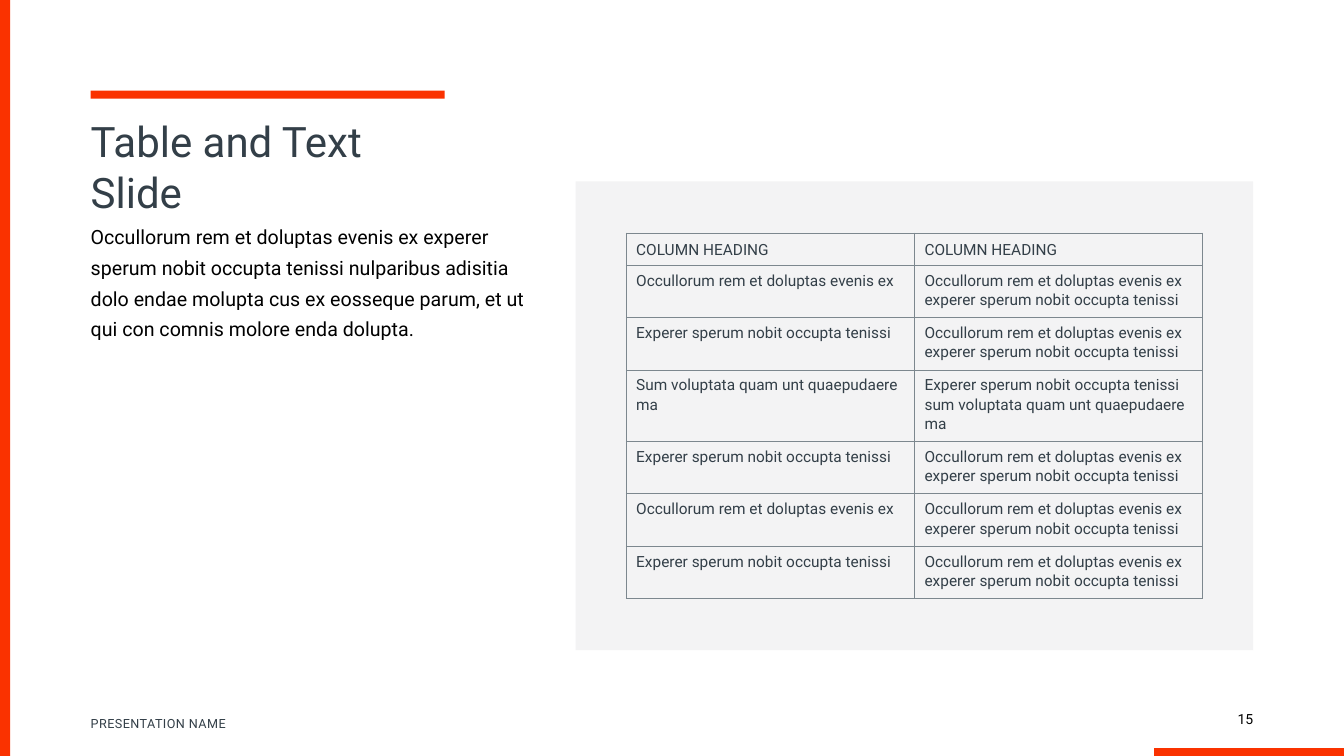
from dataclasses import dataclass

from lxml.etree import SubElement as Sub
from pptx import Presentation
from pptx.dml.color import RGBColor as RGB
from pptx.enum.shapes import MSO_CONNECTOR as Conn, MSO_SHAPE as Form
from pptx.enum.text import MSO_ANCHOR as Anchor, MSO_AUTO_SIZE as Fit, PP_ALIGN as Align
from pptx.oxml.ns import qn
from pptx.util import Inches, Pt


@dataclass(frozen=True)
class Theme:
    font: str = "Roboto"
    red: str = "FA3200"
    slate: str = "333F48"
    black: str = "000000"
    panel: str = "F3F3F4"
    rule: str = "7C878E"
    title: int = 30
    body: int = 14
    cell: int = 11
    page: int = 10
    foot: int = 9


T = Theme()

BODY = """Occullorum rem et doluptas evenis ex experer
sperum nobit occupta tenissi nulparibus adisitia
dolo endae molupta cus ex eosseque parum, et ut
qui con comnis molore enda dolupta."""

HEAD = "COLUMN HEADING"
OCC = "Occullorum rem et doluptas evenis ex"
EXP = "Experer sperum nobit occupta tenissi"
SUM = "um voluptata quam unt quaepudaere\nma"
PAIR = f"{OCC}\nexperer sperum nobit occupta tenissi"
ROWS = [
    (HEAD, HEAD),
    (OCC, PAIR),
    (EXP, PAIR),
    (f"S{SUM}", f"{EXP}\ns{SUM}"),
    (EXP, PAIR),
    (OCC, PAIR),
    (EXP, PAIR),
]


def write(frame, text, size, color, lead=None, align=Align.LEFT):
    frame.text = text
    for para in frame.paragraphs:
        para.alignment = align
        para.space_before = Pt(0)
        if lead:
            para.line_spacing = Pt(lead)
        for run in para.runs:
            font = run.font
            font.name, font.size, font.bold = T.font, Pt(size), False
            font.color.rgb = RGB.from_string(color)


def inset(frame, top=0):
    frame.word_wrap = True
    frame.auto_size = Fit.NONE
    frame.margin_left = frame.margin_right = frame.margin_bottom = 0
    frame.margin_top = Inches(top)


def add_rect(slide, box, color):
    rect = slide.shapes.add_shape(Form.RECTANGLE, *map(Inches, box))
    rect.shadow.inherit = False
    rect.fill.solid()
    rect.fill.fore_color.rgb = RGB.from_string(color)
    rect.line.fill.background()


def add_text(slide, box, text, size, color, anchor=Anchor.TOP, **style):
    frame = slide.shapes.add_textbox(*map(Inches, box)).text_frame
    inset(frame)
    frame.vertical_anchor = anchor
    write(frame, text, size, color, **style)
    return frame


def add_frame(slide, box):
    """Edge bars, footer and page number."""
    x, y, w, h = box
    add_rect(slide, (x, y, 0.1, h), T.red)
    base = y + h - 0.04
    line = slide.shapes.add_connector(
        Conn.STRAIGHT, *map(Inches, (x + w - 1.88, base, x + w, base)))
    line.line.color.rgb = RGB.from_string(T.red)
    line.line.width = Pt(6)
    Sub(line._element.spPr, qn("a:effectLst"))
    foot = add_text(slide, (x + 0.9, y + h - 0.4, 5.5, 0.15),
                    "PRESENTATION NAME", T.foot, T.slate, Anchor.BOTTOM)
    foot.paragraphs[0].runs[0]._r.get_or_add_rPr().set("spc", "30")
    add_text(slide, (x + w - 1.4, y + h - 0.45, 0.5, 0.17),
             "15", T.page, T.black, Anchor.BOTTOM, align=Align.RIGHT)


def add_intro(slide, box):
    """Red bar, title and body text."""
    x, y, w, h = box
    wide = 3.51
    add_rect(slide, (x, y, wide, 0.08), T.red)
    title = slide.shapes.title
    title.left, title.top, title.width, title.height = map(
        Inches, (x, y, wide, 1.25))
    inset(title.text_frame, 0.25)
    title.text_frame.vertical_anchor = Anchor.TOP
    write(title.text_frame, "Table and Text Slide", T.title, T.slate, 36)
    add_text(slide, (x, y + 1.26, w, h - 1.26), BODY, T.body, T.black, lead=22)


def add_edges(cell):
    props = cell._tc.get_or_add_tcPr()
    for side in "LRTB":
        edge = Sub(props, qn(f"a:ln{side}"), w=str(Pt(0.5)))
        fill = Sub(edge, qn("a:solidFill"))
        Sub(fill, qn("a:srgbClr"), val=T.rule)


def add_grid(slide, box):
    """Grey panel with the table centred in it."""
    add_rect(slide, box, T.panel)
    x, y, w, h = box
    pad = 0.5
    wide = w - 2 * pad
    # The header is the lowest row; each extra text line adds height
    highs = [0.32] + [0.52 if b.count("\n") == 1 else 0.71 for a, b in ROWS[1:]]
    table = slide.shapes.add_table(
        len(ROWS), 2, *map(Inches, (x + pad, y + pad + 0.01, wide, sum(highs)))).table
    table.first_row = table.horz_banding = False
    for col in table.columns:
        col.width = Inches(wide / 2)
    for i, (row, high, texts) in enumerate(zip(table.rows, highs, ROWS)):
        row.height = Inches(high)
        for cell, text in zip(row.cells, texts):
            add_edges(cell)
            cell.fill.background()
            cell.vertical_anchor = Anchor.TOP if i else Anchor.MIDDLE
            write(cell.text_frame, text, T.cell, T.slate, 14)


def main():
    deck = Presentation()
    deck.slide_width, deck.slide_height = Inches(13.33), Inches(7.5)
    slide = deck.slides.add_slide(deck.slide_layouts[5])
    add_frame(slide, (0, 0, 13.33, 7.5))
    add_grid(slide, (5.71, 1.8, 6.72, 4.65))
    add_intro(slide, (0.9, 0.9, 4.4, 4.54))
    deck.save("out.pptx")


if __name__ == "__main__":
    main()
